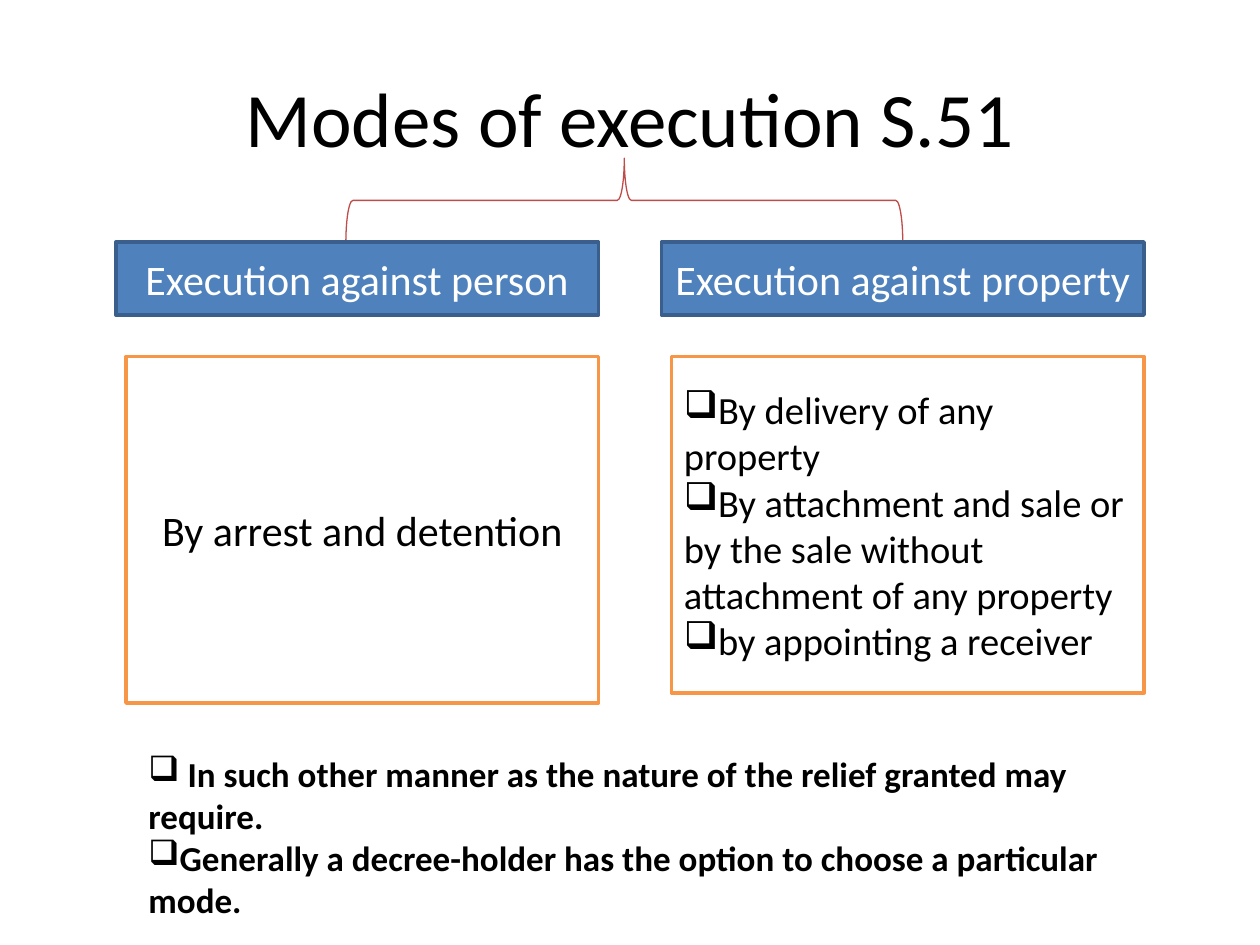
from lxml import etree
from pptx import Presentation
from pptx.dml.color import RGBColor
from pptx.enum.shapes import MSO_SHAPE
from pptx.enum.text import MSO_ANCHOR, PP_ALIGN
from pptx.oxml.ns import qn
from pptx.util import Inches, Pt

RECTANGLE, BRACE = MSO_SHAPE.RECTANGLE, MSO_SHAPE.RIGHT_BRACE
TOP, MIDDLE = MSO_ANCHOR.TOP, MSO_ANCHOR.MIDDLE
LEFT, CENTER = PP_ALIGN.LEFT, PP_ALIGN.CENTER

COLORS = {
    "black": "000000",
    "white": "FFFFFF",
    "blue": "4F81BD",
    "dark blue": "3A5F8C",
    "orange": "F79646",
    "red": "BF4C48",
}


def write(shape, lines, size, color="black", bold=False, bullet=None, anchor=MIDDLE):
    """Fill a shape with one paragraph per line; bulleted lines align left."""
    frame = shape.text_frame
    frame.word_wrap = True
    frame.vertical_anchor = anchor
    for number, line in enumerate(lines):
        para = frame.paragraphs[0] if number == 0 else frame.add_paragraph()
        para.alignment = LEFT if bullet else CENTER
        span = para.add_run()
        span.text = line
        span.font.color.rgb = RGBColor.from_string(COLORS[color])
        for name, value in {"name": "Calibri", "size": Pt(size), "bold": bold}.items():
            setattr(span.font, name, value)
        if bullet:
            etree.SubElement(para._p.get_or_add_pPr(), qn("a:buChar"), char=bullet)


def add_outlined(kind, left, top, width, height, line, line_width, fill=None):
    shape = page.shapes.add_shape(
        kind, Inches(left), Inches(top), Inches(width), Inches(height))
    shape.shadow.inherit = False
    shape.line.color.rgb = RGBColor.from_string(COLORS[line])
    shape.line.width = Pt(line_width)
    if fill:
        shape.fill.solid()
        shape.fill.fore_color.rgb = RGBColor.from_string(COLORS[fill])
    else:
        shape.fill.background()
    return shape


deck = Presentation()
deck.slide_width, deck.slide_height = Inches(10), Inches(7.5)
page = deck.slides.add_slide(deck.slide_layouts[6])

title = page.shapes.add_textbox(Inches(0.5), Inches(0.3), Inches(9), Inches(1.25))
write(title, ["Modes of execution S.51"], 44)

brace = add_outlined(BRACE, 4.62, -0.62, 0.67, 4.42, "red", 0.75)
brace.rotation = 270

# Each mode: right edge, heading, detail height, detail lines, detail format
modes = [
    (4.75, "Execution against person", 2.75,
     ["By arrest and detention"], {"size": 24}),
    (9.08, "Execution against property", 2.67,
     ["By delivery of any property",
      "By attachment and sale or by the sale without attachment of any property",
      "by appointing a receiver"], {"size": 22, "bullet": "❑"}),
]
for right, heading, height, details, style in modes:
    header = add_outlined(RECTANGLE, right - 3.83, 1.92, 3.83, 0.58, "dark blue", 2, "blue")
    write(header, [heading], 24, "white")
    detail = add_outlined(RECTANGLE, right - 3.75, 2.83, 3.75, height, "orange", 2, "white")
    write(detail, details, **style)

notice = page.shapes.add_textbox(Inches(1.08), Inches(5.92), Inches(8), Inches(1.45))
write(notice, [
    " In such other manner as the nature of the relief granted may require.",
    "Generally a decree-holder has the option to choose a particular mode.",
], 20, bold=True, bullet="❑", anchor=TOP)

deck.save("out.pptx")
